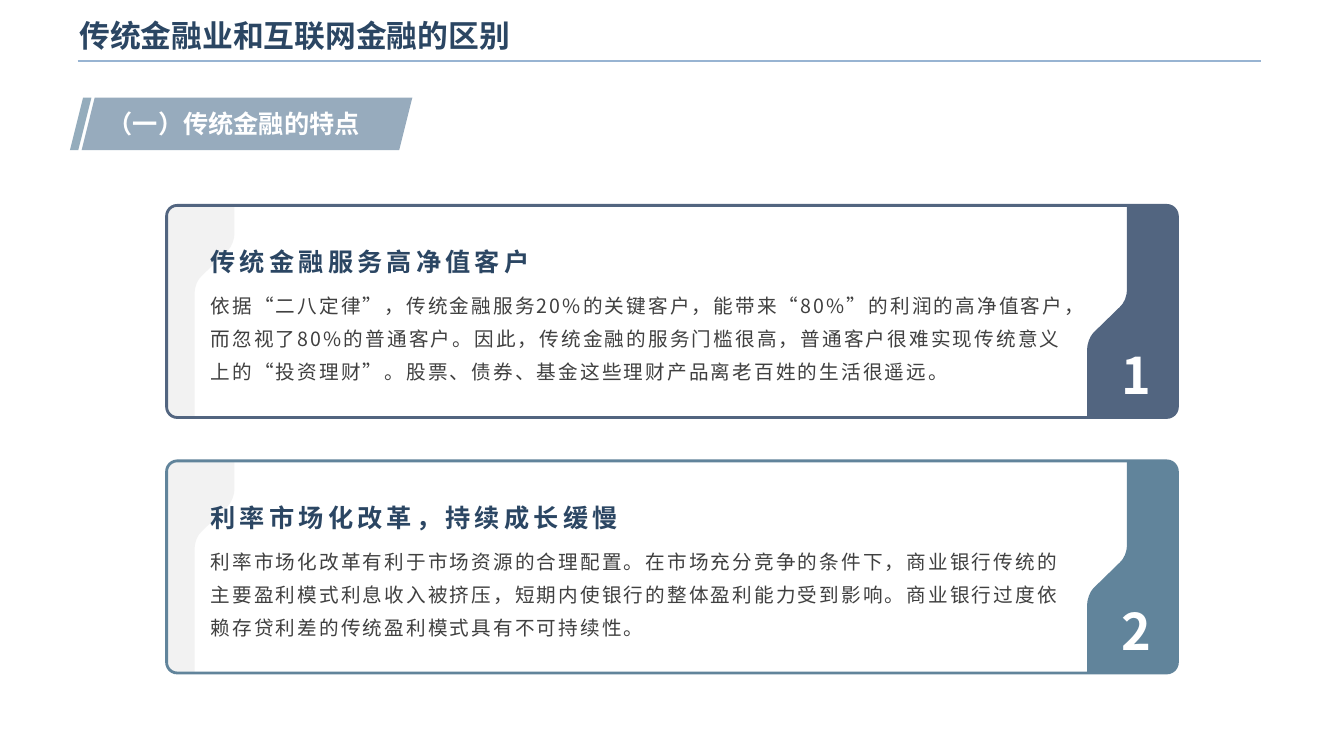
from dataclasses import dataclass

from lxml import etree
from pptx import Presentation
from pptx.dml.color import RGBColor
from pptx.enum.shapes import MSO_CONNECTOR, MSO_SHAPE
from pptx.enum.text import MSO_ANCHOR, PP_ALIGN
from pptx.oxml.ns import qn
from pptx.util import Pt

STRAIGHT = MSO_CONNECTOR.STRAIGHT
PARALLELOGRAM = MSO_SHAPE.PARALLELOGRAM
ROUNDED_RECTANGLE = MSO_SHAPE.ROUNDED_RECTANGLE
TOP, MIDDLE, BOTTOM = MSO_ANCHOR.TOP, MSO_ANCHOR.MIDDLE, MSO_ANCHOR.BOTTOM
LEFT, CENTER = PP_ALIGN.LEFT, PP_ALIGN.CENTER


@dataclass(frozen=True)
class Theme:
    title_font: str = "Arial"
    body_font: str = "Noto Sans CJK SC"
    navy: str = "2B4663"
    text: str = "404040"
    white: str = "FFFFFF"
    rule: str = "98B4D2"
    banner_stripe: str = "94ACBC"
    banner: str = "97ABBD"
    panel: str = "F2F2F2"
    title_size: float = 22
    heading_size: float = 18
    body_size: float = 14
    number_size: float = 36


CARD_LEFT, CARD_TOP, CARD_WIDTH, CARD_HEIGHT = 119, 146.7, 722, 151.5
CARD_PITCH = 182.5
CORNER = 7
CARDS = [
    ("526580", "传统金融服务高净值客户",
     "依据“二八定律”，传统金融服务20%的关键客户，能带来“80%”的利润的高净值客户，"
     "而忽视了80%的普通客户。因此，传统金融的服务门槛很高，普通客户很难实现传统意义上的"
     "“投资理财”。股票、债券、基金这些理财产品离老百姓的生活很遥远。"),
    ("61849B", "利率市场化改革，持续成长缓慢",
     "利率市场化改革有利于市场资源的合理配置。在市场充分竞争的条件下，商业银行传统的"
     "主要盈利模式利息收入被挤压，短期内使银行的整体盈利能力受到影响。商业银行过度依赖"
     "存贷利差的传统盈利模式具有不可持续性。"),
]


def band_segments(narrow, notch):
    """Segments as (distance from the outer side, distance from the narrow end).

    One point is a straight line to it; three points are a Bézier curve.
    """
    height, half = CARD_HEIGHT, CORNER / 2
    wide = narrow + 28.5
    return [
        [(CORNER, 0)],
        [(narrow, 0)],
        [(narrow, notch)],
        [(narrow, notch + 4), (narrow + 2, notch + 9.5), (narrow + 5, notch + 12)],
        [(wide - 4.5, notch + 30.5)],
        [(wide - 2, notch + 33), (wide, notch + 38.5), (wide, notch + 42.5)],
        [(wide, height)],
        [(CORNER, height)],
        [(half, height), (0, height - half), (0, height - CORNER)],
        [(0, CORNER)],
        [(0, half), (half, 0), (CORNER, 0)],
    ]


class SlideBuilder:
    def __init__(self, slide, theme):
        self.slide = slide
        self.theme = theme

    def fill(self, shape, color):
        shape.shadow.inherit = False
        shape.fill.solid()
        shape.fill.fore_color.rgb = RGBColor.from_string(color)
        shape.line.fill.background()

    def text(self, box, content, size, color, font=None, bold=True, anchor=TOP,
             align=LEFT, insets=(3.6, 3.6), line_spacing=None, tracking=0):
        """Add a text box; insets are top and bottom, tracking is in points."""
        frame = self.slide.shapes.add_textbox(*map(Pt, box)).text_frame
        frame.word_wrap = True
        frame.vertical_anchor = anchor
        frame.margin_top, frame.margin_bottom = map(Pt, insets)
        paragraph = frame.paragraphs[0]
        paragraph.text = content
        paragraph.alignment = align
        if line_spacing:
            paragraph.line_spacing = line_spacing
        name = font or self.theme.body_font
        paragraph.font.name = name
        paragraph.font.size = Pt(size)
        paragraph.font.bold = bold
        paragraph.font.color.rgb = RGBColor.from_string(color)
        properties = paragraph._p.pPr.find(qn("a:defRPr"))
        etree.SubElement(properties, qn("a:ea")).set("typeface", name)
        if tracking:
            properties.set("spc", str(round(tracking * 100)))

    def rule(self, left, right, y):
        line = self.slide.shapes.add_connector(STRAIGHT, Pt(left), Pt(y), Pt(right), Pt(y))
        line.line.color.rgb = RGBColor.from_string(self.theme.rule)
        line.line.width = Pt(1)
        etree.SubElement(line._element.spPr, qn("a:effectLst"))

    def parallelogram(self, box, slant, color):
        shape = self.slide.shapes.add_shape(PARALLELOGRAM, *map(Pt, box))
        shape.adjustments[0] = slant
        self.fill(shape, color)

    def outline(self, segments, place, color):
        """Draw segments whose points are mapped to the slide by place."""
        points = [tuple(map(Pt, place(*point))) for segment in segments for point in segment]
        freeform = self.slide.shapes.build_freeform(*points[0])
        freeform.add_line_segments(points[1:], close=True)
        shape = freeform.convert_to_shape()
        lines = iter(list(shape._element.iter(qn("a:lnTo"))))
        for segment in segments[1:]:
            first, *others = [next(lines) for _ in segment]
            if others:
                first.tag = qn("a:cubicBezTo")
            for line in others:
                first.append(line[0])
                line.getparent().remove(line)
        self.fill(shape, color)

    def frame(self, box, color):
        shape = self.slide.shapes.add_shape(ROUNDED_RECTANGLE, *map(Pt, box))
        shape.adjustments[0] = 0.05
        shape.shadow.inherit = False
        shape.fill.background()
        shape.line.color.rgb = RGBColor.from_string(color)
        shape.line.width = Pt(2)

    def card(self, number, top, color, heading, body):
        theme = self.theme
        right, bottom = CARD_LEFT + CARD_WIDTH, top + CARD_HEIGHT
        self.outline(band_segments(36, 60.5), lambda x, y: (right - x, top + y), color)
        self.outline(band_segments(20, 89), lambda x, y: (CARD_LEFT + x, bottom - y),
                     theme.panel)
        self.frame((CARD_LEFT, top, CARD_WIDTH, CARD_HEIGHT), color)
        text_left = CARD_LEFT + 24.3
        self.text((text_left, top + 56.7, 633, 83.5), body, theme.body_size, theme.text,
                  bold=False, insets=(0, 3.6), line_spacing=1.4, tracking=1.5)
        self.text((text_left, top + 22, 633, 29), heading, theme.heading_size, theme.navy,
                  anchor=BOTTOM, insets=(3.6, 0), tracking=3)
        self.text((right - 59.3, top + 95.8, 60, 55.5), str(number), theme.number_size,
                  theme.white, align=CENTER)


def main():
    presentation = Presentation()
    presentation.slide_width, presentation.slide_height = Pt(960), Pt(540)
    theme = Theme()
    slide = presentation.slides.add_slide(presentation.slide_layouts[6])
    builder = SlideBuilder(slide, theme)

    builder.rule(55.5, 900.7, 43.5)
    builder.text((49.7, 6, 771, 38), "传统金融业和互联网金融的区别", theme.title_size,
                 theme.navy, font=theme.title_font, anchor=MIDDLE)
    builder.parallelogram((50, 69.8, 15.3, 37.4), 0.61, theme.banner_stripe)
    builder.parallelogram((58.3, 69.8, 236.2, 37.4), 0.25, theme.banner)
    builder.text((69.8, 73.8, 219.6, 29), "（一）传统金融的特点", theme.heading_size, theme.white)

    for index, (color, heading, body) in enumerate(CARDS):
        builder.card(index + 1, CARD_TOP + index * CARD_PITCH, color, heading, body)
    presentation.save("out.pptx")


if __name__ == "__main__":
    main()
